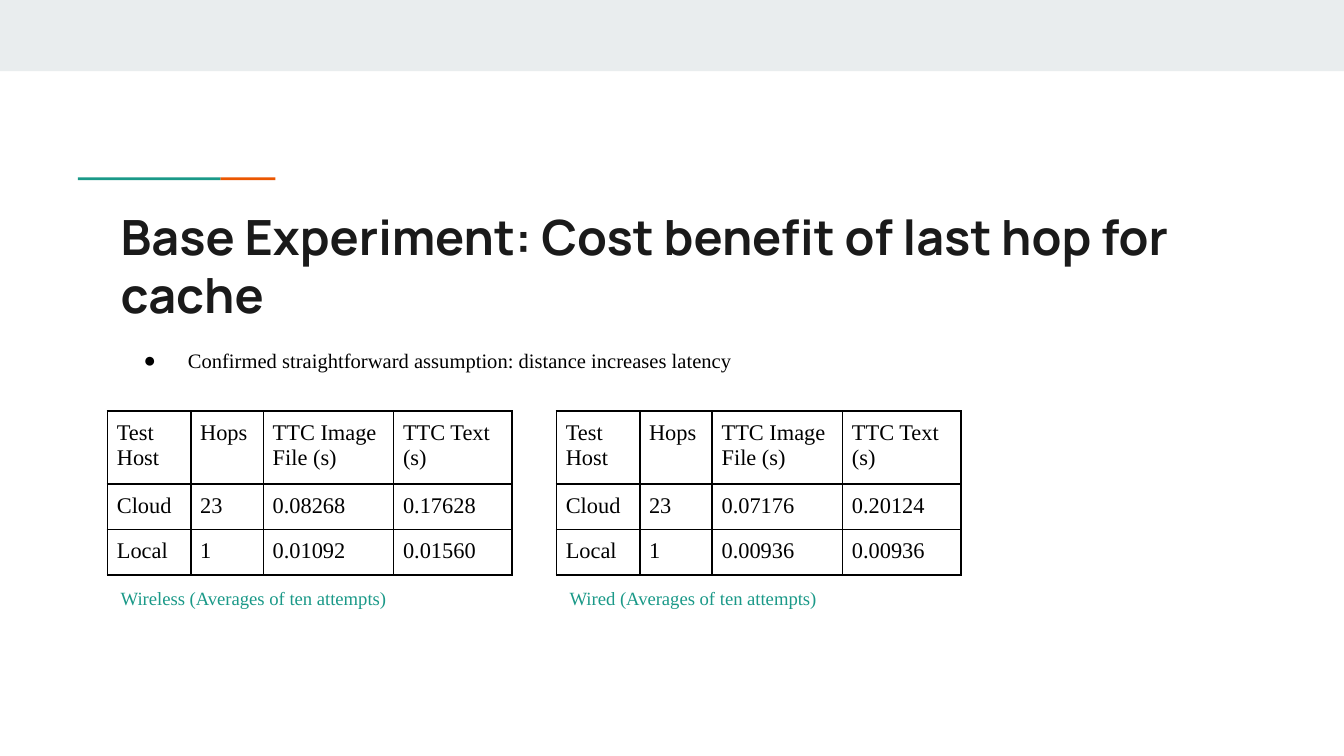
from lxml.etree import SubElement
from pptx import Presentation
from pptx.dml.color import RGBColor
from pptx.enum.shapes import MSO_SHAPE
from pptx.oxml.ns import qn
from pptx.util import Inches, Pt

BLACK = RGBColor(0x00, 0x00, 0x00)
INK = RGBColor(0x1A, 0x1A, 0x1A)
MIST = RGBColor(0xE9, 0xED, 0xEE)
TEAL = RGBColor(0x1A, 0x99, 0x88)
ORANGE = RGBColor(0xEB, 0x56, 0x00)

HEADER = ["Test Host", "Hops", "TTC Image File (s)", "TTC Text (s)"]
COLUMN_WIDTHS = [0.62, 0.54, 0.97, 0.88]
ROW_HEIGHT = 0.01
EXPERIMENTS = [
    ("Wireless", 0.8, [["Cloud", "23", "0.08268", "0.17628"],
                       ["Local", "1", "0.01092", "0.01560"]]),
    ("Wired", 4.14, [["Cloud", "23", "0.07176", "0.20124"],
                     ["Local", "1", "0.00936", "0.00936"]]),
]


class SlideWriter:
    """Draws styled bars, text and result tables on one slide."""

    serif = "Times New Roman"
    heading = "Manrope"

    def __init__(self, page):
        self.page = page

    def style(self, para, size, color, name, bold=False):
        para.font.size = Pt(size)
        para.font.color.rgb = color
        para.font.name = name
        para.font.bold = bold

    def bar(self, left, top, width, height, color):
        box = self.page.shapes.add_shape(
            MSO_SHAPE.RECTANGLE, Inches(left), Inches(top), Inches(width), Inches(height))
        box.shadow.inherit = False
        box.fill.solid()
        box.fill.fore_color.rgb = color
        box.line.fill.background()

    def text(self, left, top, width, height, words, size, color, name=serif, bold=False):
        box = self.page.shapes.add_textbox(
            Inches(left), Inches(top), Inches(width), Inches(height))
        frame = box.text_frame
        frame.word_wrap = True
        frame.margin_left = frame.margin_right = Inches(0.1)
        frame.margin_top = frame.margin_bottom = Inches(0.1)
        para = frame.paragraphs[0]
        para.text = words
        self.style(para, size, color, name, bold)
        return para

    def bullet(self, left, top, width, height, words, size, color):
        para = self.text(left, top, width, height, words, size, color)
        properties = para._p.get_or_add_pPr()
        properties.set("marL", str(Inches(0.5)))
        properties.set("indent", str(Inches(-0.33)))
        marks = [
            SubElement(properties, qn("a:buSzPts"), val=str(size * 100)),
            SubElement(properties, qn("a:buFont"), typeface=self.serif),
            SubElement(properties, qn("a:buChar"), char="●"),
        ]
        for position, mark in enumerate(marks):
            properties.insert(position, mark)

    def border(self, cell):
        properties = cell._tc.get_or_add_tcPr()
        for position, side in enumerate(("lnL", "lnR", "lnT", "lnB")):
            line = SubElement(properties, qn(f"a:{side}"), w=str(Pt(1)))
            fill = SubElement(line, qn("a:solidFill"))
            SubElement(fill, qn("a:srgbClr"), val=str(BLACK))
            properties.insert(position, line)

    def table(self, left, top, rows):
        table = self.page.shapes.add_table(
            len(rows), len(COLUMN_WIDTHS), Inches(left), Inches(top),
            Inches(sum(COLUMN_WIDTHS)), Inches(ROW_HEIGHT * len(rows))).table
        table.first_row = table.horz_banding = False
        for column, width in zip(table.columns, COLUMN_WIDTHS):
            column.width = Inches(width)
        for row, values in zip(table.rows, rows):
            row.height = Inches(ROW_HEIGHT)
            for cell, value in zip(row.cells, values):
                cell.text = value
                cell.margin_left = cell.margin_right = Inches(0.07)
                cell.margin_top = cell.margin_bottom = Inches(0.07)
                cell.fill.background()
                self.style(cell.text_frame.paragraphs[0], 12, BLACK, self.serif)
                self.border(cell)


def main():
    deck = Presentation()
    deck.slide_width = Inches(10)
    deck.slide_height = deck.slide_width * 9 // 16
    writer = SlideWriter(deck.slides.add_slide(deck.slide_layouts[6]))
    writer.bar(0, 0, 10, 0.53, MIST)
    writer.bar(1.64, 1.32, 0.41, 0.02, ORANGE)
    writer.bar(0.58, 1.32, 1.06, 0.02, TEAL)
    writer.text(0.8, 1.44, 8.41, 0.59,
                "Base Experiment: Cost benefit of last hop for cache",
                26, INK, writer.heading, True)
    writer.bullet(0.8, 2.5, 4.77, 2.47,
                  "Confirmed straightforward assumption: distance increases latency", 11, BLACK)
    for network, left, rows in EXPERIMENTS:
        writer.table(left, 3.06, [HEADER] + rows)
        writer.text(left, 4.28, 3.01, 0.34,
                    f"{network} (Averages of ten attempts)", 10, TEAL)
    deck.save("out.pptx")


if __name__ == "__main__":
    main()
